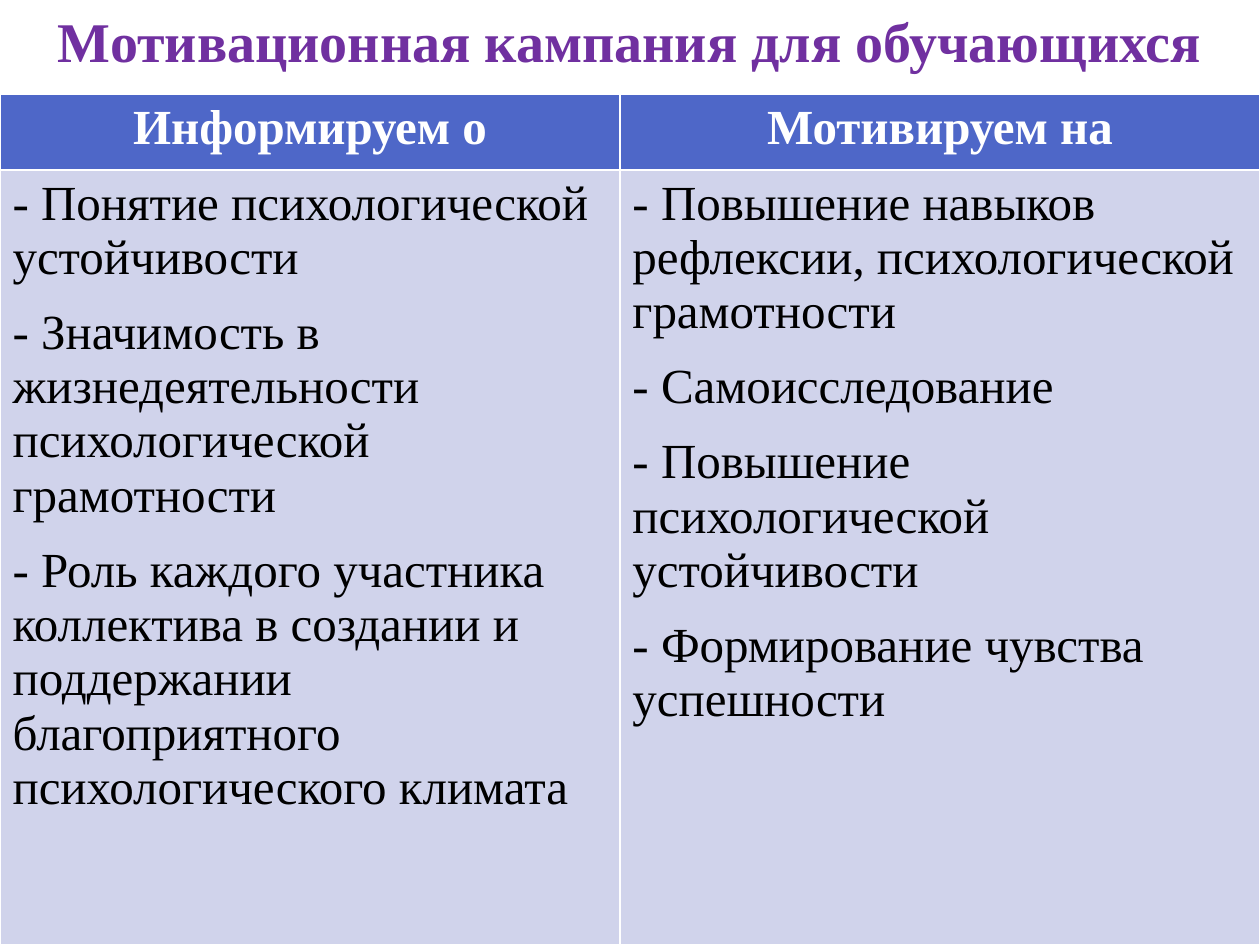
"""Build a slide with a two-column table on a motivation campaign for students."""
from dataclasses import dataclass

from pptx import Presentation
from pptx import util as u
from pptx.dml.color import RGBColor
from pptx.enum import text


@dataclass(frozen=True)
class Theme:
    font: str = "Times New Roman"
    title: RGBColor = RGBColor(0x70, 0x30, 0xA0)
    header_fill: RGBColor = RGBColor(0x4E, 0x67, 0xC8)
    header_text: RGBColor = RGBColor(0xFF, 0xFF, 0xFF)
    body_fill: RGBColor = RGBColor(0xD0, 0xD3, 0xEB)
    body_text: RGBColor = RGBColor(0, 0, 0)
    title_size: int = 32
    table_size: int = 28
    space_after: int = 12


@dataclass(frozen=True)
class Column:
    heading: str
    width: float
    items: tuple[str, ...]


THEME = Theme()
TITLE = "Мотивационная кампания для обучающихся"
TABLE_TOP = 0.75
ROW_HEIGHTS = (0.6, 6.15)
COLUMNS = (
    Column("Информируем о", 4.92, (
        "- Понятие психологической устойчивости",
        "- Значимость в жизнедеятельности психологической грамотности",
        "- Роль каждого участника коллектива в создании и поддержании "
        "благоприятного психологического климата",
    )),
    Column("Мотивируем на", 5.08, (
        "- Повышение навыков рефлексии, психологической грамотности",
        "- Самоисследование",
        "- Повышение психологической устойчивости",
        "- Формирование чувства успешности",
    )),
)


def format_paragraph(p, size: int, color: RGBColor, bold: bool, align) -> None:
    """Apply alignment and font settings to a paragraph and its runs."""
    p.alignment = align
    for r in p.runs:
        r.font.name = THEME.font
        r.font.size = u.Pt(size)
        r.font.bold = bold
        r.font.color.rgb = color


def add_title(slide) -> None:
    """Place and format the slide title."""
    sp = slide.shapes.title
    sp.left, sp.top = u.Inches(0), u.Inches(0)
    sp.width, sp.height = u.Inches(10), u.Inches(0.64)
    tf = sp.text_frame
    tf.text = TITLE
    tf.word_wrap = True
    tf.vertical_anchor = text.MSO_ANCHOR.TOP
    format_paragraph(tf.paragraphs[0], THEME.title_size, THEME.title, True,
                     text.PP_ALIGN.CENTER)


def fill_cell(cell, lines: tuple[str, ...], header: bool) -> None:
    """Write lines into a header or body cell."""
    cell.fill.solid()
    cell.fill.fore_color.rgb = THEME.header_fill if header else THEME.body_fill
    color = THEME.header_text if header else THEME.body_text
    align = text.PP_ALIGN.CENTER if header else text.PP_ALIGN.LEFT
    tf = cell.text_frame
    tf.text = "\n".join(lines)
    for p in tf.paragraphs:
        format_paragraph(p, THEME.table_size, color, header, align)
        if not header:
            p.space_after = u.Pt(THEME.space_after)


def add_campaign_table(slide, columns: tuple[Column, ...]) -> None:
    """Add the table with one heading and one list per column."""
    width = sum(column.width for column in columns)
    table = slide.shapes.add_table(
        len(ROW_HEIGHTS), len(columns), u.Inches(0), u.Inches(TABLE_TOP),
        u.Inches(width), u.Inches(sum(ROW_HEIGHTS))).table
    for row, height in zip(table.rows, ROW_HEIGHTS):
        row.height = u.Inches(height)
    for i, column in enumerate(columns):
        table.columns[i].width = u.Inches(column.width)
        fill_cell(table.cell(0, i), (column.heading,), True)
        fill_cell(table.cell(1, i), column.items, False)


def main() -> None:
    """Create and save the presentation."""
    prs = Presentation()
    prs.slide_width, prs.slide_height = u.Inches(10), u.Inches(7.5)
    s = prs.slides.add_slide(prs.slide_layouts[5])
    add_title(s)
    add_campaign_table(s, COLUMNS)
    prs.save("out.pptx")


if __name__ == "__main__":
    main()
